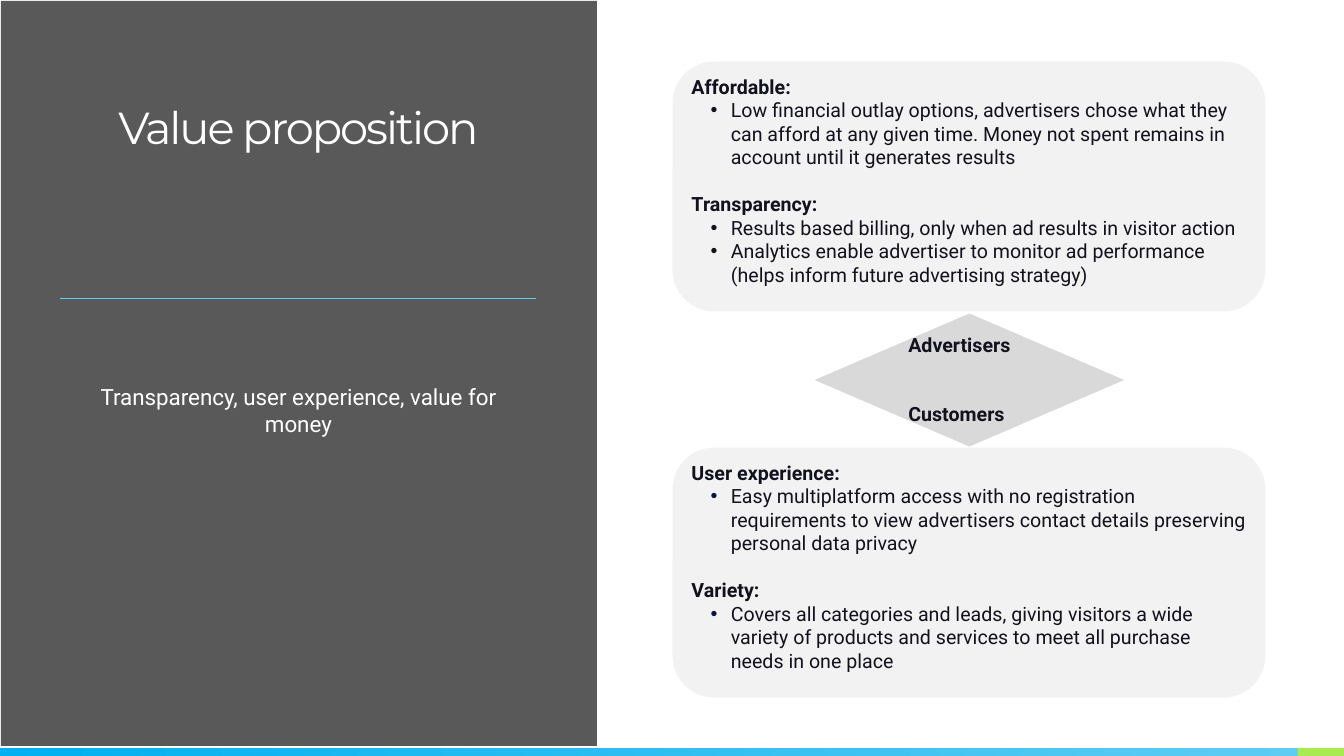
from dataclasses import dataclass

from lxml import etree
from pptx import Presentation
from pptx.dml.color import RGBColor
from pptx.enum.shapes import MSO_CONNECTOR, MSO_SHAPE as Shape
from pptx.enum.text import PP_ALIGN as Align
from pptx.oxml.ns import qn
from pptx.util import Inches, Pt


@dataclass(frozen=True)
class Theme:
    title_font: str = "Montserrat"
    body_font: str = "Roboto"
    title_size: float = 32
    subtitle_size: float = 16
    body_size: float = 14
    section_gap: float = 16.8
    ink: str = "12121E"
    white: str = "FFFFFF"
    black: str = "000000"
    card: str = "F2F2F2"
    arrow: str = "D9D9D9"
    blue: str = "00B0F0"
    sky: str = "5ECCF3"
    green: str = "A7EA52"
    navy: str = "071445"


THEME = Theme()

BENEFITS = [
    ("Affordable:", [
        "Low financial outlay options, advertisers chose what they can afford "
        "at any given time. Money not spent remains in account until it "
        "generates results"]),
    ("Transparency:", [
        "Results based billing, only when ad results in visitor action",
        "Analytics enable advertiser to monitor ad performance "
        "(helps inform future advertising strategy)"]),
]
EXPERIENCE = [
    ("User experience:", [
        "Easy multiplatform access with no registration requirements to view "
        "advertisers contact details preserving personal data privacy"]),
    ("Variety:", [
        "Covers all categories and leads, giving visitors a wide variety of "
        "products and services to meet all purchase needs in one place"]),
]


def color(value):
    return RGBColor.from_string(value)


def add_block(page, kind, box, fill):
    shape = page.shapes.add_shape(kind, *map(Inches, box))
    shape.shadow.inherit = False
    shape.fill.solid()
    shape.fill.fore_color.rgb = color(fill)
    shape.line.fill.background()
    return shape


def add_text_frame(page, box):
    frame = page.shapes.add_textbox(*map(Inches, box)).text_frame
    frame.word_wrap = True
    return frame


def add_span(para, text, size=THEME.body_size, ink=THEME.ink,
             font=THEME.body_font, bold=False):
    span = para.add_run()
    span.text = text
    span.font.name = font
    span.font.size = Pt(size)
    span.font.bold = bold
    span.font.color.rgb = color(ink)
    return span


def set_bullet(para, ink):
    props = para._p.get_or_add_pPr()
    props.set("marL", str(Inches(0.39)))
    props.set("indent", str(Inches(-0.2)))
    bullet_color = etree.SubElement(props, qn("a:buClr"))
    etree.SubElement(bullet_color, qn("a:srgbClr"), val=ink)
    etree.SubElement(props, qn("a:buFont"), typeface="Arial")
    etree.SubElement(props, qn("a:buChar"), char="•")


# Footer: gradient strip with a green end
def add_footer(page, box):
    left, top, width, height = box
    end_width = 0.46
    strip = add_block(page, Shape.RECTANGLE,
                      (left, top, width - end_width, height), THEME.blue)
    strip.fill.gradient()
    strip.fill.gradient_angle = 0
    for stop, position, shade in zip(strip.fill.gradient_stops, (0, 1),
                                     (THEME.blue, THEME.sky)):
        stop.position = position
        stop.color.rgb = color(shade)
    add_block(page, Shape.RECTANGLE,
              (left + width - end_width, top, end_width, height), THEME.green)


# Left panel: title, rule and subtitle on translucent black
def add_title_panel(page, box):
    left, top, width, height = box
    panel = add_block(page, Shape.RECTANGLE, box, THEME.black)
    shade = panel.fill._xPr.find(qn("a:solidFill"))[0]
    etree.SubElement(shade, qn("a:alpha"), val="65000")

    inner_left, inner_width = left + 0.59, width - 1.19
    rule_top = Inches(top + 2.95)
    rule = page.shapes.add_connector(
        MSO_CONNECTOR.STRAIGHT, Inches(inner_left), rule_top,
        Inches(inner_left + inner_width), rule_top)
    rule.line.color.rgb = color(THEME.sky)
    rule.line.width = Pt(0.5)
    etree.SubElement(rule._element.spPr, qn("a:effectLst"))

    title = add_text_frame(page, (inner_left, top + 0.99, inner_width, 1.18))
    para = title.paragraphs[0]
    para.alignment = Align.CENTER
    para.line_spacing = 0.9
    span = add_span(para, "Value proposition", THEME.title_size, THEME.white,
                    THEME.title_font)
    span.font._element.set("spc", "-150")

    subtitle = add_text_frame(page, (inner_left, top + 3.74, inner_width, 1.97))
    para = subtitle.paragraphs[0]
    para.alignment = Align.CENTER
    add_span(para, "Transparency, user experience, value for money",
             THEME.subtitle_size, THEME.white)


# Card: headed bullet lists on a rounded rectangle
def add_card(page, box, sections, bullet_ink):
    left, top, width, height = box
    add_block(page, Shape.ROUNDED_RECTANGLE, box, THEME.card)
    frame = add_text_frame(
        page, (left + 0.09, top + 0.08, width - 0.17, height - 0.16))
    for index, (heading, points) in enumerate(sections):
        para = frame.add_paragraph() if index else frame.paragraphs[0]
        if index:
            para.space_before = Pt(THEME.section_gap)
        add_span(para, heading, bold=True)
        for point in points:
            para = frame.add_paragraph()
            para.level = 1
            set_bullet(para, bullet_ink)
            add_span(para, point)


# Arrow between the cards, with a label at each head
def add_audience_arrow(page, box):
    left, top, width, height = box
    arrow = add_block(page, Shape.UP_DOWN_ARROW, box, THEME.arrow)
    arrow.adjustments[0] = 0.565
    arrow.adjustments[1] = 0.379
    for label, offset in (("Advertisers", 0.14), ("Customers", 0.83)):
        frame = add_text_frame(page, (left + 0.83, top + offset, 1.42, 0.33))
        add_span(frame.paragraphs[0], label, bold=True)


def main():
    deck = Presentation()
    deck.slide_width, deck.slide_height = Inches(13.33), Inches(7.5)
    page = deck.slides.add_slide(deck.slide_layouts[6])
    add_footer(page, (0, 7.42, 13.33, 0.08))
    add_card(page, (6.67, 0.61, 5.88, 2.48), BENEFITS, THEME.ink)
    add_card(page, (6.67, 4.44, 5.88, 2.48), EXPERIENCE, THEME.navy)
    add_audience_arrow(page, (8.08, 3.11, 3.07, 1.32))
    add_title_panel(page, (0.01, 0.01, 5.91, 7.39))
    deck.save("out.pptx")


if __name__ == "__main__":
    main()
